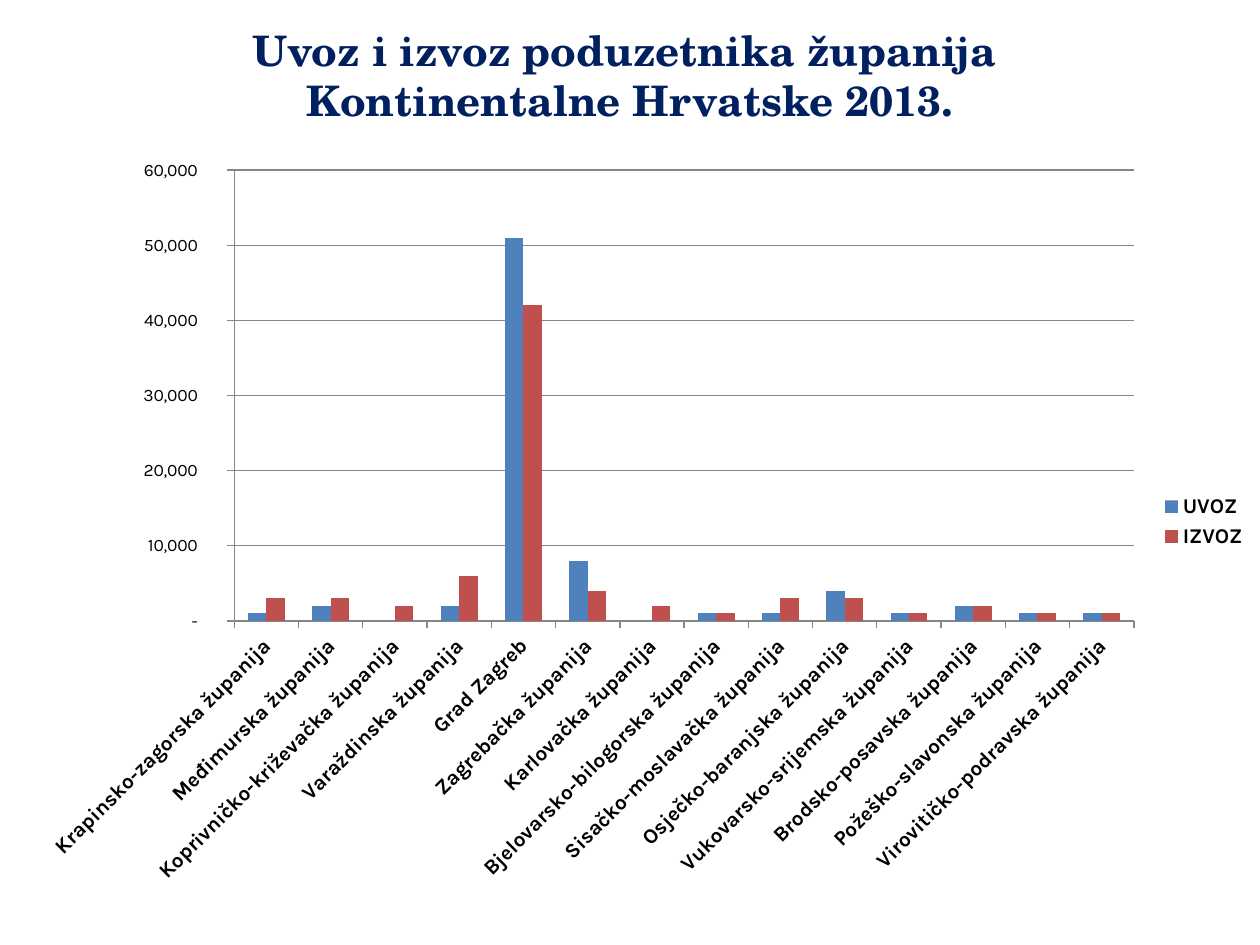
from lxml import etree
from pptx import Presentation
from pptx.chart.data import CategoryChartData
from pptx.dml.color import RGBColor
from pptx.enum.chart import XL_CHART_TYPE, XL_LEGEND_POSITION, XL_TICK_MARK
from pptx.enum.text import MSO_ANCHOR, PP_ALIGN
from pptx.oxml import parse_xml
from pptx.oxml.ns import nsdecls, qn
from pptx.util import Inches, Pt

CLUSTERED = XL_CHART_TYPE.COLUMN_CLUSTERED
LEGEND_RIGHT = XL_LEGEND_POSITION.RIGHT
TICK_OUTSIDE = XL_TICK_MARK.OUTSIDE
MIDDLE = MSO_ANCHOR.MIDDLE
CENTER = PP_ALIGN.CENTER

COLORS = {
    "background": "FFFFFF",
    "title": "002060",
    "text": "000000",
    "axis": "868686",
    "UVOZ": "4F81BD",
    "IZVOZ": "C0504D",
}
TITLE_LINES = ["Uvoz i izvoz poduzetnika županija ", "Kontinentalne Hrvatske 2013."]
TRADE = [
    ("Krapinsko-zagorska županija", 1000, 3000),
    ("Međimurska županija", 2000, 3000),
    ("Koprivničko-križevačka županija", 0, 2000),
    ("Varaždinska županija", 2000, 6000),
    ("Grad Zagreb", 51000, 42000),
    ("Zagrebačka županija", 8000, 4000),
    ("Karlovačka županija", 0, 2000),
    ("Bjelovarsko-bilogorska županija", 1000, 1000),
    ("Sisačko-moslavačka županija", 1000, 3000),
    ("Osječko-baranjska županija", 4000, 3000),
    ("Vukovarsko-srijemska županija", 1000, 1000),
    ("Brodsko-posavska županija", 2000, 2000),
    ("Požeško-slavonska županija", 1000, 1000),
    ("Virovitičko-podravska županija", 1000, 1000),
]
NUMBER_FORMAT = r'_-* #,##0\ _k_n_-;\-* #,##0\ _k_n_-;_-* "-"\ _k_n_-;_-@_-'
CHART_LEFT, CHART_TOP = Inches(0.2), Inches(1.15)
CHART_WIDTH, CHART_HEIGHT = Inches(9.8), Inches(5.98)
PLOT_LAYOUT = {
    "x": (Inches(1.86) - CHART_LEFT) / CHART_WIDTH,
    "y": (Inches(1.35) - CHART_TOP) / CHART_HEIGHT,
    "w": Inches(7.14) / CHART_WIDTH,
    "h": Inches(3.58) / CHART_HEIGHT,
}


def format_font(font, color, **values):
    font.color.rgb = RGBColor.from_string(COLORS[color])
    for name, value in values.items():
        setattr(font, name, value)


presentation = Presentation()
presentation.slide_width = Inches(10)
presentation.slide_height = Inches(7.5)
slide = presentation.slides.add_slide(presentation.slide_layouts[5])

title = slide.shapes.title
title.left, title.top = Inches(0), Inches(-0.03)
title.width, title.height = Inches(10), Inches(1.25)
title.fill.solid()
title.fill.fore_color.rgb = RGBColor.from_string(COLORS["background"])
title.text_frame.vertical_anchor = MIDDLE
paragraph = title.text_frame.paragraphs[0]
paragraph.alignment = CENTER
for index, line in enumerate(TITLE_LINES):
    if index:
        paragraph.add_line_break()
    run = paragraph.add_run()
    run.text = line
    format_font(run.font, "title", name="TeX Gyre Schola", size=Pt(24), bold=True)

counties, imports, exports = zip(*TRADE)
chart_data = CategoryChartData(number_format=NUMBER_FORMAT)
chart_data.categories = counties
chart_data.add_series("UVOZ", imports)
chart_data.add_series("IZVOZ", exports)
chart = slide.shapes.add_chart(
    CLUSTERED, CHART_LEFT, CHART_TOP, CHART_WIDTH, CHART_HEIGHT, chart_data
).chart
chart.has_title = False
format_font(chart.font, "text", name="Karla", size=Pt(10))

plot = chart.plots[0]
plot.gap_width = 150
plot.overlap = 0
plot.vary_by_categories = False
for series in plot.series:
    series.format.fill.solid()
    series.format.fill.fore_color.rgb = RGBColor.from_string(COLORS[series.name])

category_axis, value_axis = chart.category_axis, chart.value_axis
value_format = {
    "minimum_scale": 0,
    "maximum_scale": 60000,
    "major_unit": 10000,
    "has_major_gridlines": True,
}
for name, value in value_format.items():
    setattr(value_axis, name, value)
value_axis.tick_labels.number_format = NUMBER_FORMAT
value_axis.tick_labels.number_format_is_linked = False
for axis in (category_axis, value_axis):
    axis.major_tick_mark = TICK_OUTSIDE
for line_format in (category_axis.format, value_axis.format, value_axis.major_gridlines.format):
    line_format.line.color.rgb = RGBColor.from_string(COLORS["axis"])
    line_format.line.width = Pt(0.75)

format_font(category_axis.tick_labels.font, "text", name="Karla", size=Pt(12), bold=True)
label_body = category_axis._element.find(qn("c:txPr")).find(qn("a:bodyPr"))
label_body.set("rot", "-2700000")
label_body.set("vert", "horz")

chart.has_legend = True
chart.legend.position = LEGEND_RIGHT
chart.legend.include_in_layout = False
format_font(chart.legend.font, "text", name="Karla", size=Pt(12), bold=True)

plot_area = chart._chartSpace.chart.plotArea
for layout in plot_area.findall(qn("c:layout")):
    plot_area.remove(layout)
layout = parse_xml(f"<c:layout {nsdecls('c')}><c:manualLayout/></c:layout>")
settings = {"layoutTarget": "inner", "xMode": "edge", "yMode": "edge", **PLOT_LAYOUT}
for name, value in settings.items():
    etree.SubElement(layout[0], qn(f"c:{name}")).set("val", str(value))
plot_area.insert(0, layout)

presentation.save("out.pptx")
